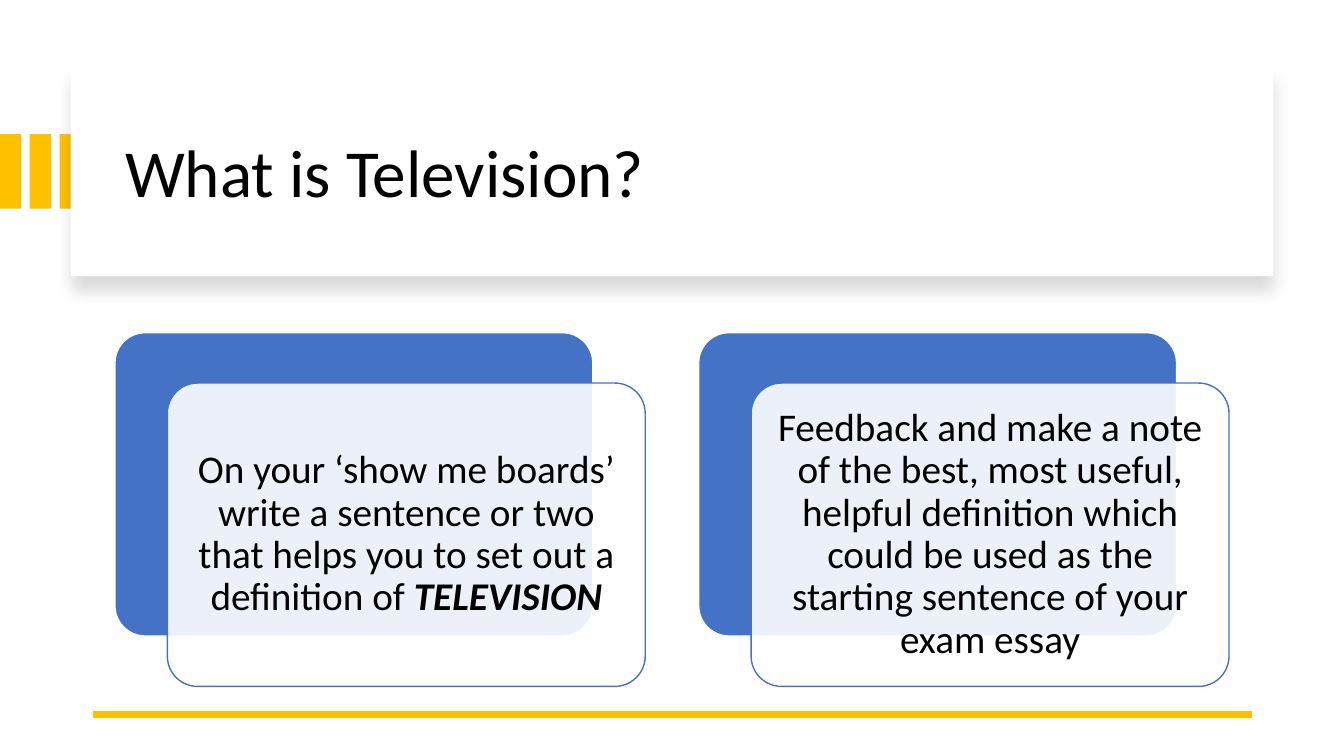
from lxml import etree
from pptx import Presentation
from pptx import util as u
from pptx.dml.color import RGBColor
from pptx.enum import shapes, text
from pptx.oxml import ns

GOLD = RGBColor(0xFF, 0xC0, 0x00)
BLUE = RGBColor(0x44, 0x72, 0xC4)
WHITE = RGBColor(0xFF, 0xFF, 0xFF)
BLACK = RGBColor(0x00, 0x00, 0x00)

STRIPE_PITCH = 0.295
CARD_PITCH = 5.79
CARDS = [
    [("On your ‘show me boards’ write a sentence or two that helps you "
      "to set out a definition of ", False), ("TELEVISION", True)],
    [("Feedback and make a note of the best, most useful, helpful definition "
      "which could be used as the starting sentence of your exam essay", False)],
]


class LessonSlide:
    """Draws the elements of one lesson slide in a shared style."""

    font = "Calibri"

    def __init__(self, deck):
        self.slide = deck.slides.add_slide(deck.slide_layouts[5])
        self.shapes = self.slide.shapes

    def style(self, run, size, emphasis=False):
        run.font.name = self.font
        run.font.size = u.Pt(size)
        run.font.color.rgb = BLACK
        run.font.bold = run.font.italic = emphasis

    def place(self, frame, box, margin):
        frame.word_wrap = True
        frame.auto_size = text.MSO_AUTO_SIZE.NONE
        frame.vertical_anchor = text.MSO_ANCHOR.MIDDLE
        frame.margin_left = frame.margin_right = u.Inches(margin[0])
        frame.margin_top = frame.margin_bottom = u.Inches(margin[1])
        frame.paragraphs[0].line_spacing = 0.9

    def panel(self, box, fill, line=None, rounded=False, opacity=None):
        kind = shapes.MSO_SHAPE.ROUNDED_RECTANGLE if rounded else shapes.MSO_SHAPE.RECTANGLE
        panel = self.shapes.add_shape(kind, *map(u.Inches, box))
        panel.shadow.inherit = False
        panel.fill.solid()
        panel.fill.fore_color.rgb = fill
        if rounded:
            panel.adjustments[0] = 0.1
        if line is None:
            panel.line.fill.background()
        else:
            panel.line.color.rgb = line
            panel.line.width = u.Pt(1)
        if opacity is not None:
            color = panel._element.spPr.find(ns.qn("a:solidFill"))[0]
            etree.SubElement(color, ns.qn("a:alpha"), val=str(opacity * 1000))
        return panel

    def drop_shadow(self, panel):
        effects = panel._element.spPr.find(ns.qn("a:effectLst"))
        shadow = etree.SubElement(
            effects, ns.qn("a:outerShdw"), blurRad=str(u.Pt(11)), dist=str(u.Pt(10)),
            dir="5400000", algn="t", rotWithShape="0")
        color = etree.SubElement(shadow, ns.qn("a:srgbClr"), val=str(BLACK))
        etree.SubElement(color, ns.qn("a:alpha"), val="15000")

    def title(self, wording, box):
        heading = self.shapes.title
        heading.left, heading.top, heading.width, heading.height = map(u.Inches, box)
        self.shapes._spTree.append(heading._element)
        frame = heading.text_frame
        frame.text = wording
        self.place(frame, box, (0.1, 0.05))
        frame.paragraphs[0].alignment = text.PP_ALIGN.LEFT
        self.style(frame.paragraphs[0].runs[0], 48)

    def rule(self, start, end):
        rule = self.shapes.add_connector(
            shapes.MSO_CONNECTOR.STRAIGHT, *map(u.Inches, start + end))
        rule.line.color.rgb = GOLD
        rule.line.width = u.Pt(4.5)
        etree.SubElement(rule._element.spPr, ns.qn("a:effectLst"))

    def prompt(self, parts, box):
        frame = self.shapes.add_textbox(*map(u.Inches, box)).text_frame
        self.place(frame, box, (0.12, 0.12))
        paragraph = frame.paragraphs[0]
        paragraph.alignment = text.PP_ALIGN.CENTER
        for wording, emphasis in parts:
            run = paragraph.add_run()
            run.text = wording
            self.style(run, 28, emphasis)

    def card(self, parts, left, top):
        self.panel((left, top, 4.74, 3.01), BLUE, WHITE, rounded=True)
        self.panel((left + 0.52, top + 0.5, 4.74, 3.01), WHITE, BLUE, rounded=True, opacity=90)
        self.prompt(parts, (left + 0.61, top + 0.59, 4.56, 2.83))


def main():
    deck = Presentation()
    deck.slide_width, deck.slide_height = u.Inches(13.33), u.Inches(7.5)
    lesson = LessonSlide(deck)
    for stripe in range(3):
        lesson.panel((stripe * STRIPE_PITCH, 1.33, 0.21, 0.74), GOLD)
    lesson.drop_shadow(lesson.panel((0.7, 0.67, 11.93, 2.07), WHITE))
    lesson.title("What is Television?", (1.14, 0.89, 11.13, 1.7))
    lesson.rule((12.42, 7.09), (0.92, 7.09))
    for index, parts in enumerate(CARDS):
        lesson.card(parts, 1.14 + index * CARD_PITCH, 3.3)
    deck.save("out.pptx")


if __name__ == "__main__":
    main()
